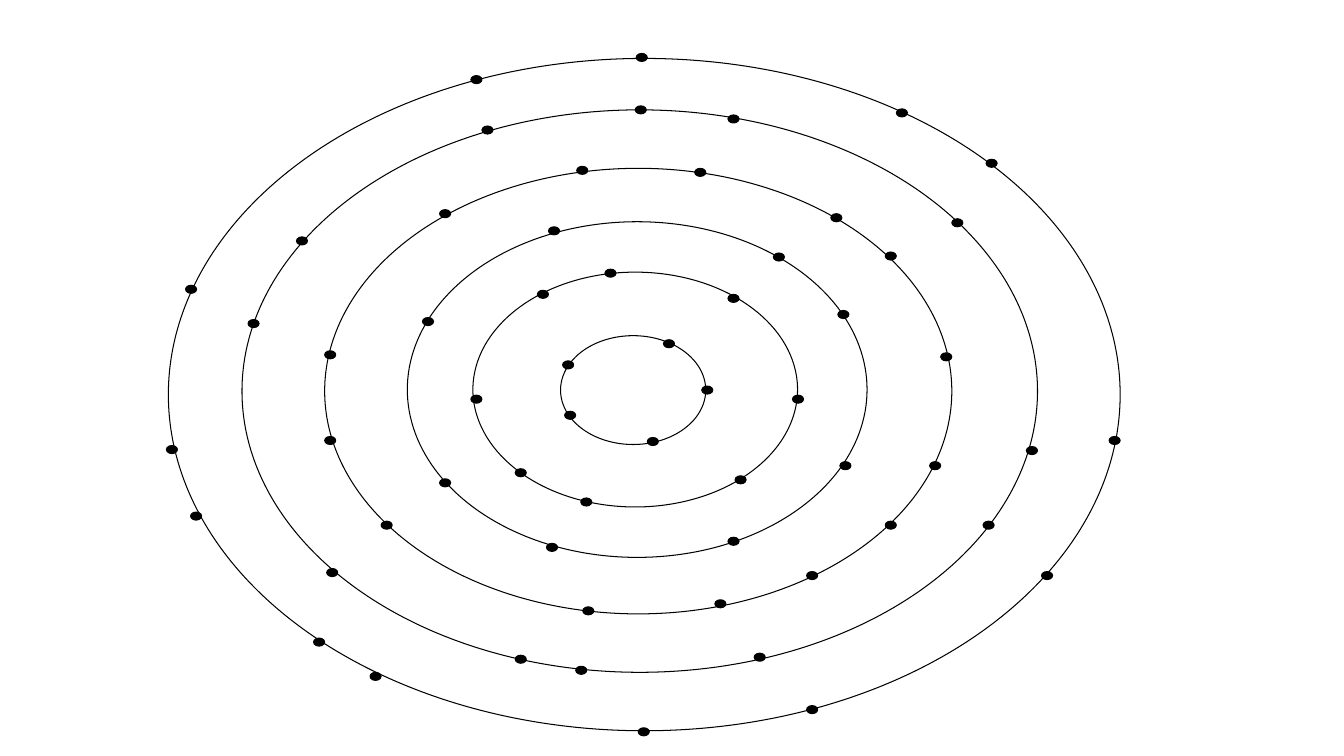
from pptx import Presentation
from pptx.dml.color import RGBColor
from pptx.enum.shapes import MSO_SHAPE
from pptx.util import Inches, Pt

OVAL = MSO_SHAPE.OVAL
BLANK = 6
COLORS = {"ink": "000000"}
SLIDE_BOX = (0, 0, 13.33, 7.5)
DOT_SIZE = (0.11, 0.08)
LINE_FORMAT = {"width": Pt(0.75)}

SHELLS = [
    ((5.56, 3.33, 1.44, 1.08),
     [(6.58, 3.37), (6.96, 3.83), (6.42, 4.34), (5.6, 4.08), (5.58, 3.58)]),
    ((4.69, 2.7, 3.22, 2.33),
     [(4.67, 3.92), (7.86, 3.92), (5.76, 4.94), (6, 2.67),
      (5.33, 2.88), (7.22, 2.92), (5.11, 4.65), (7.29, 4.72)]),
    ((4.04, 2.2, 4.56, 3.33),
     [(4.19, 3.15), (4.36, 4.75), (5.44, 2.25), (7.67, 2.51),
      (8.31, 3.08), (5.42, 5.39), (7.22, 5.33), (8.33, 4.58)]),
    ((3.22, 1.67, 6.22, 4.42),
     [(3.22, 4.33), (3.22, 3.48), (4.36, 2.08), (5.72, 1.65), (6.89, 1.67),
      (8.24, 2.12), (8.78, 2.5), (9.33, 3.5), (9.22, 4.58), (3.78, 5.17),
      (5.78, 6.02), (7.09, 5.95), (8, 5.67), (8.78, 5.17)]),
    ((2.4, 1.09, 7.89, 5.58),
     [(2.46, 3.17), (2.94, 2.35), (4.78, 1.25), (6.3, 1.05), (7.22, 1.14),
      (9.44, 2.17), (10.18, 4.43), (3.24, 5.64), (5.11, 6.5), (5.71, 6.61),
      (7.48, 6.48), (9.75, 5.17)]),
    ((1.67, 0.58, 9.44, 6.67),
     [(1.89, 5.08), (1.84, 2.83), (3.67, 6.67), (8, 7), (4.67, 0.75),
      (8.89, 1.08), (3.11, 6.33), (6.33, 7.22), (10.33, 5.67), (1.65, 4.42),
      (6.31, 0.53), (9.78, 1.58), (11, 4.33)]),
]


def add_oval(shapes, box, fill=None):
    sp = shapes.add_shape(OVAL, *map(Inches, box))
    sp.shadow.inherit = False
    if fill:
        sp.fill.solid()
        sp.fill.fore_color.rgb = RGBColor.from_string(fill)
    else:
        sp.fill.background()
    sp.line.color.rgb = RGBColor.from_string(COLORS["ink"])
    for name, value in LINE_FORMAT.items():
        setattr(sp.line, name, value)
    return sp


def add_rings(s, box):
    left, top = box[:2]
    group = s.shapes.add_group_shape()
    for (x, y, w, h), _ in SHELLS:
        add_oval(group.shapes, (left + x, top + y, w, h))


def add_dots(s, box):
    left, top = box[:2]
    for _, dots in SHELLS:
        for x, y in dots:
            add_oval(s.shapes, (left + x, top + y, *DOT_SIZE), COLORS["ink"])


def main():
    prs = Presentation()
    prs.slide_width, prs.slide_height = map(Inches, SLIDE_BOX[2:])
    s = prs.slides.add_slide(prs.slide_layouts[BLANK])
    add_rings(s, SLIDE_BOX)
    add_dots(s, SLIDE_BOX)
    prs.save("out.pptx")


if __name__ == "__main__":
    main()
